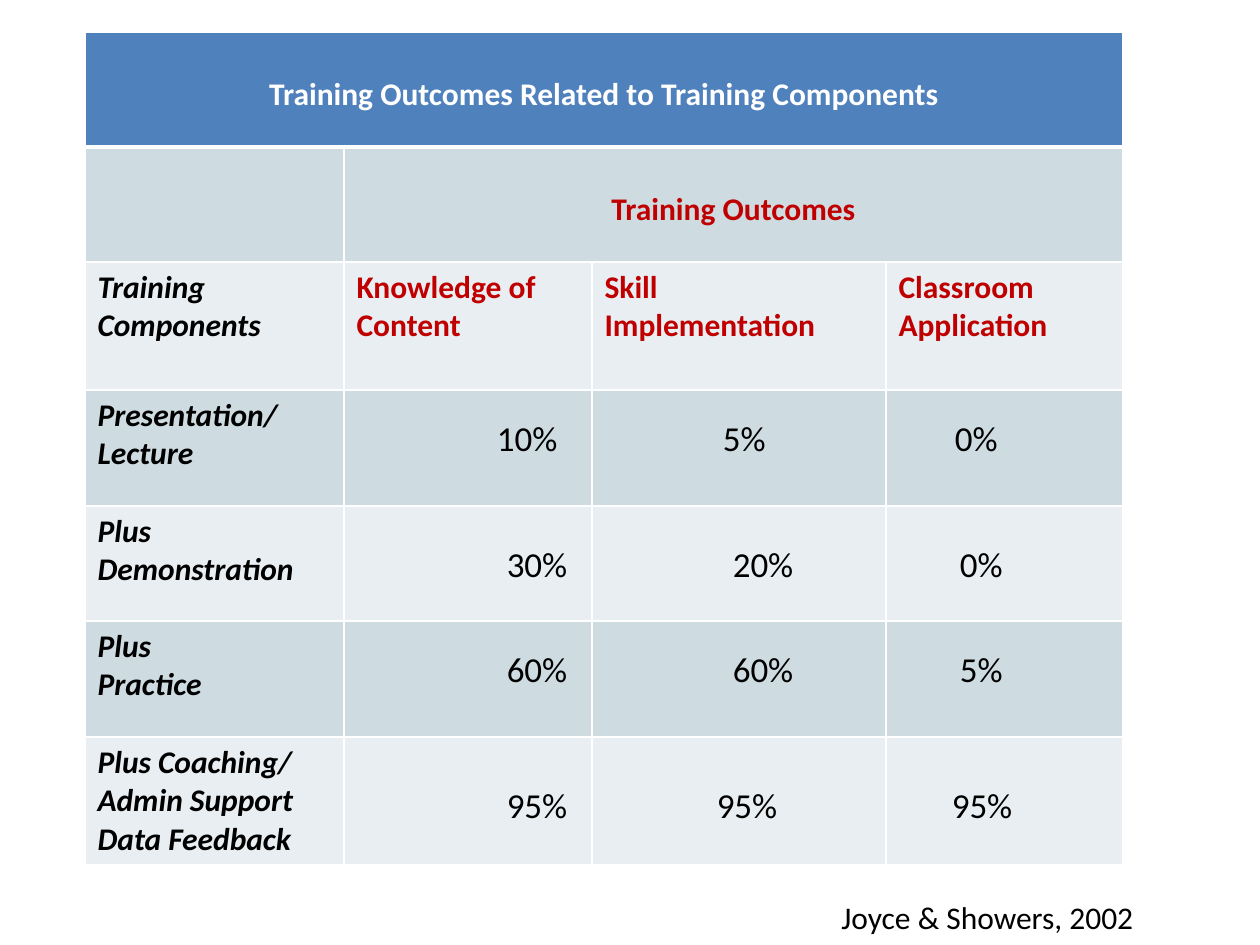
import pptx
import pptx.dml.color
import pptx.enum.text
import pptx.oxml
import pptx.oxml.ns
import pptx.util

PIXELS_PER_INCH = 126
THEME = {
    "font": "Calibri", "body": 18, "value": 20,
    "header": "4F81BD", "dark band": "CEDCE1", "light band": "E8EEF1",
    "white": "FFFFFF", "black": "000000", "red": "C00000",
}


def px(length):
    return pptx.util.Emu(round(length * 914400 / PIXELS_PER_INCH))


def write(text_frame, text, color, size="body", alignment="LEFT", **styles):
    """Write one paragraph per line of text, all in one format."""
    text_frame.text = text
    text_frame.word_wrap = True
    formats = {"name": THEME["font"], "size": pptx.util.Pt(THEME[size]), **styles}
    for paragraph in text_frame.paragraphs:
        paragraph.alignment = getattr(pptx.enum.text.PP_ALIGN, alignment)
        for run in paragraph.runs:
            run.font.color.rgb = pptx.dml.color.RGBColor.from_string(THEME[color])
            for attribute, value in formats.items():
                setattr(run.font, attribute, value)


presentation = pptx.Presentation()
presentation.slide_width = px(1260)
presentation.slide_height = px(945)
slide = presentation.slides.add_slide(presentation.slide_layouts[6])

# Table grid
column_widths = [259, 248, 294, 237]
row_heights = [115, 115, 128, 116, 115, 116, 127]
table = slide.shapes.add_table(
    len(row_heights), len(column_widths),
    px(85), px(32), px(sum(column_widths)), px(sum(row_heights)),
).table
for column, width in zip(table.columns, column_widths):
    column.width = px(width)
for row, height in zip(table.rows, row_heights):
    row.height = px(height)

# Cell fills and white borders, with a heavier rule under the header
for row_index, row in enumerate(table.rows):
    band = "header" if row_index == 0 else ("light band", "dark band")[row_index % 2]
    border_widths = {
        "lnL": 1, "lnR": 1,
        "lnT": 3 if row_index == 1 else 1,
        "lnB": 3 if row_index == 0 else 1,
    }
    for cell in row.cells:
        cell.fill.solid()
        cell.fill.fore_color.rgb = pptx.dml.color.RGBColor.from_string(THEME[band])
        properties = cell._tc.get_or_add_tcPr()
        for position, (side, width) in enumerate(border_widths.items()):
            properties.insert(position, pptx.oxml.parse_xml(
                f'<a:{side} {pptx.oxml.ns.nsdecls("a")} w="{pptx.util.Pt(width)}">'
                f'<a:solidFill><a:srgbClr val="{THEME["white"]}"/></a:solidFill></a:{side}>'
            ))

# Spanning headings
table.cell(0, 0).merge(table.cell(0, 3))
table.cell(1, 1).merge(table.cell(1, 3))
headings = [
    (table.cell(0, 0), "Training Outcomes Related to Training Components", "white"),
    (table.cell(1, 1), "Training Outcomes", "red"),
]
for cell, text, color in headings:
    cell.margin_top = px(44)
    write(cell.text_frame, text, color, alignment="CENTER", bold=True)

# Outcome names across, component names down
outcomes = ["Knowledge of Content", "Skill Implementation", "Classroom\nApplication"]
for column_index, text in enumerate(outcomes, start=1):
    write(table.cell(2, column_index).text_frame, text, "red", bold=True)
components = [
    "Training Components", "Presentation/ Lecture", "Plus\nDemonstration",
    "Plus\nPractice", "Plus Coaching/ Admin Support\nData Feedback",
]
for row_index, text in enumerate(components, start=2):
    write(table.cell(row_index, 0).text_frame, text, "black", bold=True, italic=True)

# Percentages laid over each row: box left, box top, text starts, values
percentages = [
    (451, 410, (497, 723, 955), ("10%", "5%", "0%")),
    (462, 536, (507, 733, 960), ("30%", "20%", "0%")),
    (462, 641, (507, 733, 960), ("60%", "60%", "5%")),
    (462, 777, (507, 717, 952), ("95%", "95%", "95%")),
]
for left, top, starts, values in percentages:
    text_frame = slide.shapes.add_textbox(px(left), px(top), px(662), px(55)).text_frame
    write(text_frame, "".join(f"\t{value}" for value in values), "black", "value")
    stops = "".join(
        f'<a:tab pos="{px(start - left) - text_frame.margin_left}" algn="l"/>'
        for start in starts
    )
    text_frame.paragraphs[0]._p.get_or_add_pPr().append(pptx.oxml.parse_xml(
        f'<a:tabLst {pptx.oxml.ns.nsdecls("a")}>{stops}</a:tabLst>'
    ))

# Citation
citation = slide.shapes.add_textbox(px(829), px(892), px(388), px(53))
write(citation.text_frame, "Joyce & Showers, 2002", "black")

presentation.save("out.pptx")
